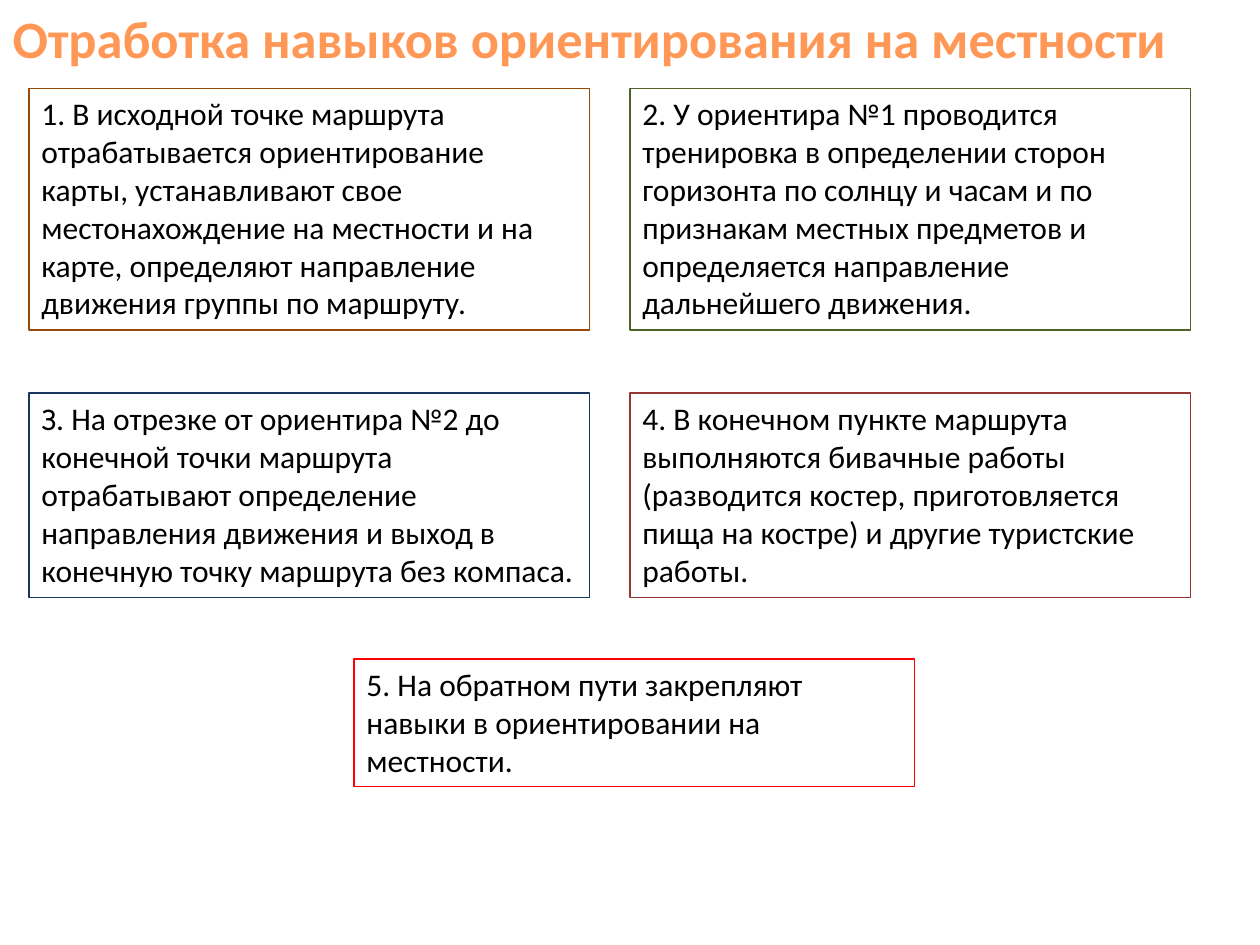
from copy import deepcopy

from pptx import Presentation
from pptx.dml.color import RGBColor
from pptx.enum import shapes, text
from pptx.oxml.ns import qn
from pptx.util import Inches, Pt

# Content
TITLE = "Отработка навыков ориентирования на местности"
BLACK = RGBColor(0x00, 0x00, 0x00)
BROWN = RGBColor(0x98, 0x48, 0x07)
GREEN = RGBColor(0x4F, 0x62, 0x28)
NAVY = RGBColor(0x17, 0x37, 0x5E)
MAROON = RGBColor(0x95, 0x37, 0x35)
RED = RGBColor(0xFF, 0x00, 0x00)
TITLE_STOPS = [
    (0, RGBColor(0x9D, 0x47, 0x00)),
    (0.78, RGBColor(0xFF, 0x98, 0x56)),
    (1, RGBColor(0xFF, 0xF5, 0xF1)),
]

# Rows of steps: top, height, left edges, (text, border colour) pairs
LEFT, MIDDLE, RIGHT = 0.23, 2.81, 5
STEP_WIDTH = 4.45
ROWS = [
    (0.7, 1.92, (LEFT, RIGHT), [
        ("1. В исходной точке маршрута отрабатывается ориентирование карты, "
         "устанавливают свое местонахождение на местности и на карте, "
         "определяют направление движения группы по маршруту.", BROWN),
        ("2. У ориентира №1 проводится тренировка в определении сторон "
         "горизонта по солнцу и часам и по признакам местных предметов и "
         "определяется направление дальнейшего движения.", GREEN),
    ]),
    (3.12, 1.62, (LEFT, RIGHT), [
        ("З. На отрезке от ориентира №2 до конечной точки маршрута "
         "отрабатывают определение направления движения и выход в конечную "
         "точку маршрута без компаса.", NAVY),
        ("4. В конечном пункте маршрута выполняются бивачные работы "
         "(разводится костер, приготовляется пища на костре) и другие "
         "туристские работы.", MAROON),
    ]),
    (5.23, 1.01, (MIDDLE,), [
        ("5. На обратном пути закрепляют навыки в ориентировании на "
         "местности.", RED),
    ]),
]


def write_text(shape, content, size=18, bold=False, color=BLACK):
    frame = shape.text_frame
    frame.word_wrap = True
    frame.auto_size = text.MSO_AUTO_SIZE.NONE
    frame.vertical_anchor = text.MSO_ANCHOR.TOP
    paragraph = frame.paragraphs[0]
    paragraph.alignment = text.PP_ALIGN.LEFT
    run = paragraph.add_run()
    run.text = content
    run.font.name = "Calibri"
    run.font.size = Pt(size)
    run.font.bold = bold
    run.font.color.rgb = color
    return run


def apply_gradient(run, stops):
    fill = run.font.fill
    fill.gradient()
    fill.gradient_angle = 270  # counter-clockwise: top to bottom
    stop_list = next(run._r.iter(qn("a:gsLst")))
    while len(stop_list) < len(stops):
        stop_list.append(deepcopy(stop_list[-1]))
    for stop, (position, color) in zip(fill.gradient_stops, stops):
        stop.position = position
        stop.color.rgb = color


def add_step(slide, content, border, left, top, height):
    shape = slide.shapes.add_shape(
        shapes.MSO_SHAPE.RECTANGLE,
        Inches(left), Inches(top), Inches(STEP_WIDTH), Inches(height))
    shape.shadow.inherit = False
    shape.fill.background()
    shape.line.color.rgb = border
    shape.line.width = Pt(0.75)
    write_text(shape, content)


def main():
    presentation = Presentation()
    presentation.slide_width, presentation.slide_height = Inches(10), Inches(7.5)
    slide = presentation.slides.add_slide(presentation.slide_layouts[5])

    # Title
    title = slide.shapes.title
    title.left, title.top = Inches(0), Inches(0)
    title.width, title.height = Inches(10), Inches(0.61)
    title_run = write_text(title, TITLE, size=30, bold=True)
    apply_gradient(title_run, TITLE_STOPS)

    # Numbered steps
    for top, height, lefts, steps in ROWS:
        for left, (content, border) in zip(lefts, steps):
            add_step(slide, content, border, left, top, height)

    presentation.save("out.pptx")


if __name__ == "__main__":
    main()
